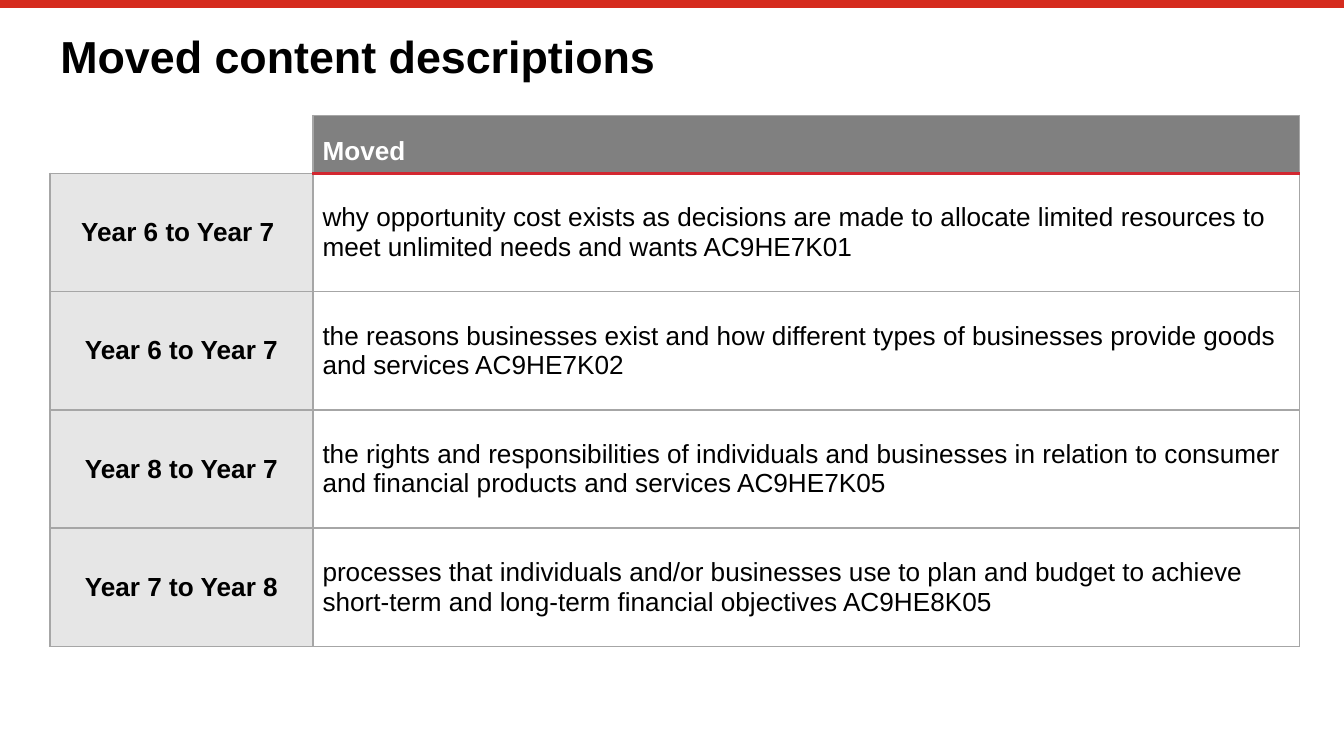
from dataclasses import dataclass

import lxml.etree
import pptx
import pptx.dml.color
import pptx.enum.shapes
import pptx.enum.text
import pptx.oxml.ns
import pptx.util

Inches = pptx.util.Inches
Pt = pptx.util.Pt
qn = pptx.oxml.ns.qn
ALIGN = pptx.enum.text.PP_ALIGN
MIDDLE = pptx.enum.text.MSO_ANCHOR.MIDDLE

FONT = "Arial"
COLORS = {
    "bar": "D52B1E",
    "rule": "D22730",
    "grid": "A6A6A6",
    "header": "808080",
    "label": "E6E6E6",
    "white": "FFFFFF",
    "black": "000000",
}


@dataclass
class Move:
    years: str
    description: str


@dataclass
class Border:
    color: str
    width: float


GRID = Border("grid", 1)
RULE = Border("rule", 1.5)

MOVES = [
    Move("Year 6 to Year 7 ", "why opportunity cost exists as decisions are made to allocate "
         "limited resources to meet unlimited needs and wants AC9HE7K01"),
    Move("Year 6 to Year 7", "the reasons businesses exist and how different types of "
         "businesses provide goods and services AC9HE7K02"),
    Move("Year 8 to Year 7", "the rights and responsibilities of individuals and businesses "
         "in relation to consumer and financial products and services AC9HE7K05"),
    Move("Year 7 to Year 8", "processes that individuals and/or businesses use to plan and "
         "budget to achieve short-term and long-term financial objectives AC9HE8K05"),
]


def rgb(name: str) -> pptx.dml.color.RGBColor:
    return pptx.dml.color.RGBColor.from_string(COLORS[name])


def add_run(para, text: str, size: float, color: str, bold: bool) -> None:
    span = para.add_run()
    span.text = text
    span.font.name = FONT
    span.font.size = Pt(size)
    span.font.bold = bold
    span.font.color.rgb = rgb(color)


def set_borders(cell, left: Border | None = GRID, right: Border | None = GRID,
                top: Border | None = GRID, bottom: Border | None = GRID) -> None:
    """Draw the four cell edges; None hides an edge. Call before setting the fill."""
    properties = cell._tc.get_or_add_tcPr()
    for side, border in zip("LRTB", (left, right, top, bottom)):
        edge = lxml.etree.SubElement(properties, qn(f"a:ln{side}"))
        if border is None:
            lxml.etree.SubElement(edge, qn("a:noFill"))
            continue
        edge.set("w", str(Pt(border.width)))
        fill = lxml.etree.SubElement(edge, qn("a:solidFill"))
        lxml.etree.SubElement(fill, qn("a:srgbClr"), val=COLORS[border.color])


def set_fill(cell, color: str | None) -> None:
    if color is None:
        cell.fill.background()
    else:
        cell.fill.solid()
        cell.fill.fore_color.rgb = rgb(color)


def set_margins(cell) -> None:
    cell.margin_left = cell.margin_right = Inches(0.07)
    cell.margin_top = cell.margin_bottom = Inches(0.04)


def write_cell(cell, text: str, color: str = "black", bold: bool = False,
               align=ALIGN.LEFT, spacing: float = 1.0) -> None:
    set_margins(cell)
    cell.vertical_anchor = MIDDLE
    para = cell.text_frame.paragraphs[0]
    para.alignment = align
    para.line_spacing = spacing
    add_run(para, text, 14, color, bold)


def add_top_bar(page) -> None:
    bar = page.shapes.add_connector(pptx.enum.shapes.MSO_CONNECTOR.STRAIGHT,
                                    Inches(0), Inches(0.03), Inches(10), Inches(0.03))
    bar.line.color.rgb = rgb("bar")
    bar.line.width = Pt(4.2)
    lxml.etree.SubElement(bar._element.spPr, qn("a:effectLst"))


def add_title(page, text: str) -> None:
    box = page.shapes.add_textbox(Inches(0.35), Inches(0.21), Inches(9.29), Inches(0.36))
    frame = box.text_frame
    frame.word_wrap = True
    frame.margin_top = Inches(0.05)
    frame.margin_bottom = Inches(0)
    para = frame.paragraphs[0]
    para.line_spacing = 0.9
    add_run(para, text, 24, "black", True)


def add_moves_table(page, moves: list[Move]) -> None:
    table = page.shapes.add_table(len(moves) + 1, 2, Inches(0.37), Inches(0.86),
                                  Inches(9.3), Inches(3.92)).table
    table.first_row = table.horz_banding = False
    for column, width in zip(table.columns, (1.96, 7.34)):
        column.width = Inches(width)
    for index, row in enumerate(table.rows):
        row.height = Inches(0.88 if index else 0.4)

    corner, header = table.cell(0, 0), table.cell(0, 1)
    set_margins(corner)
    corner.text_frame.paragraphs[0].font.size = Pt(14)
    set_borders(corner, left=None, top=None)
    set_fill(corner, None)
    set_borders(header, bottom=RULE)
    set_fill(header, "header")
    write_cell(header, "Moved", "white", bold=True, spacing=1.5)

    for index, move in enumerate(moves, start=1):
        label, description = table.cell(index, 0), table.cell(index, 1)
        set_borders(label)
        set_fill(label, "label")
        write_cell(label, move.years, bold=True, align=ALIGN.CENTER)
        set_borders(description, top=RULE if index == 1 else GRID)
        set_fill(description, None)
        write_cell(description, move.description)


def main() -> None:
    deck = pptx.Presentation()
    deck.slide_width = Inches(10)
    deck.slide_height = deck.slide_width * 9 // 16
    page = deck.slides.add_slide(deck.slide_layouts[6])
    page.background.fill.solid()
    page.background.fill.fore_color.rgb = rgb("white")
    add_top_bar(page)
    add_title(page, "Moved content descriptions")
    add_moves_table(page, MOVES)
    deck.save("out.pptx")


if __name__ == "__main__":
    main()
